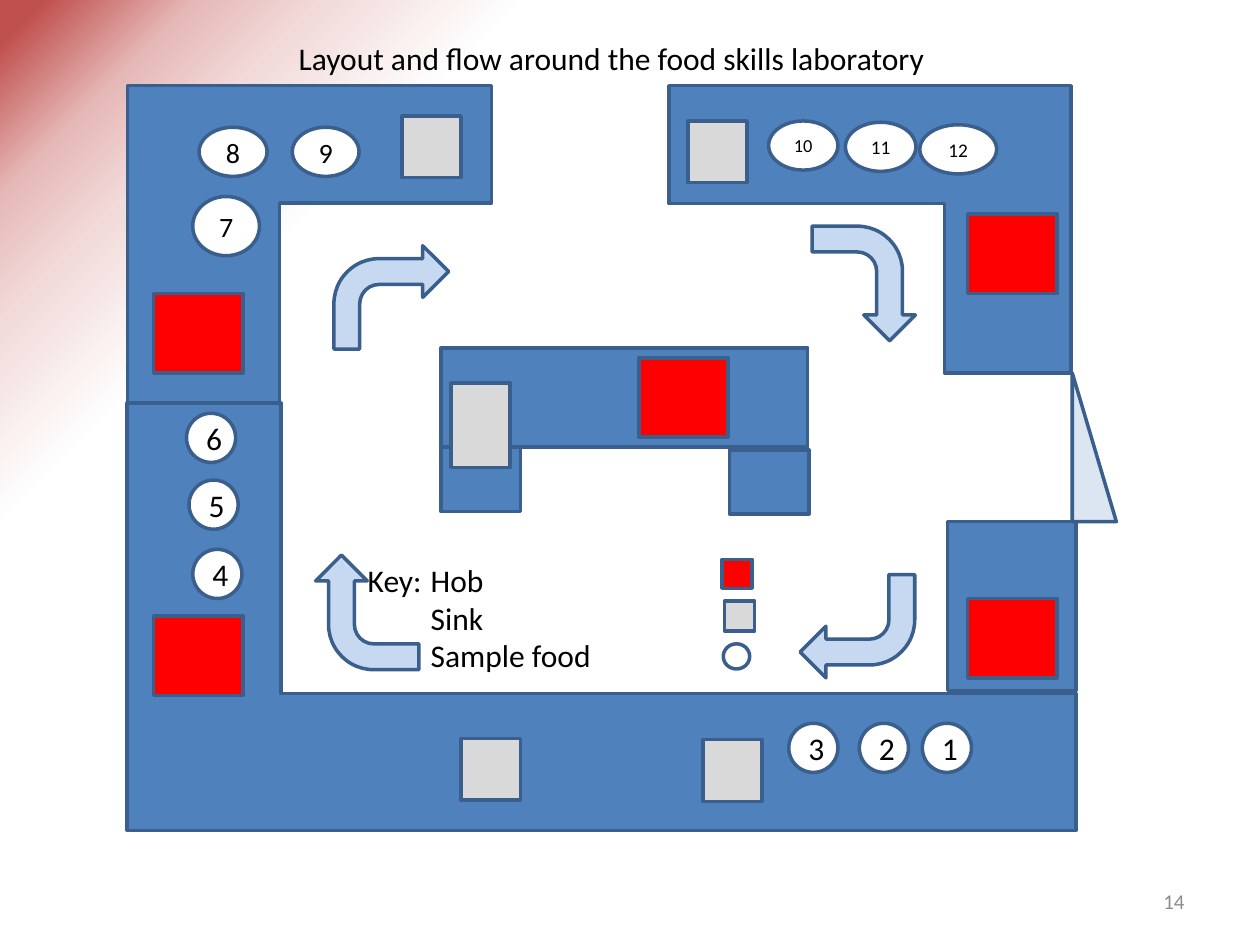
from pptx import Presentation
from pptx.dml.color import RGBColor
from pptx.enum.shapes import MSO_SHAPE
from pptx.enum.text import MSO_ANCHOR, MSO_AUTO_SIZE, PP_ALIGN
from pptx.oxml import parse_xml
from pptx.oxml.ns import nsdecls
from pptx.util import Inches, Pt

RECTANGLE = MSO_SHAPE.RECTANGLE
CORNER = MSO_SHAPE.CORNER
TRIANGLE = MSO_SHAPE.RIGHT_TRIANGLE
CIRCLE = MSO_SHAPE.FLOWCHART_CONNECTOR
BENT_ARROW = MSO_SHAPE.BENT_ARROW
TOP, MIDDLE = MSO_ANCHOR.TOP, MSO_ANCHOR.MIDDLE
LEFT, CENTER, RIGHT = PP_ALIGN.LEFT, PP_ALIGN.CENTER, PP_ALIGN.RIGHT
FIT_SHAPE = MSO_AUTO_SIZE.SHAPE_TO_FIT_TEXT

COLUMNS, ROWS = 100, 75
WHITE, BLACK, GREY_TEXT = "FFFFFF", "000000", "8C8C8C"
BENCH, OUTLINE = "4F81BD", "3A5F8C"
HOB, SINK, FLOW, DOOR = "FF0000", "D9D9D9", "C6D9F1", "DCE6F2"
GLOW = [(76, "FFFFFF"), (85, "F2DCDB"), (91, "E6B9B8"), (98, "C0504D")]


def color(hex_text):
    return RGBColor.from_string(hex_text)


class FloorPlan:
    font_name = "Calibri"
    line_width = Pt(2)

    def __init__(self, presentation):
        self.column = presentation.slide_width / COLUMNS
        self.row = presentation.slide_height / ROWS
        self.slide = presentation.slides.add_slide(presentation.slide_layouts[5])

    def box(self, left, top, width, height):
        return (round(left * self.column), round(top * self.row),
                round(width * self.column), round(height * self.row))

    def background(self, stops):
        stop_xml = "".join(
            f'<a:gs pos="{position * 1000}"><a:srgbClr val="{value}"/></a:gs>'
            for position, value in stops)
        self.slide.element.cSld.insert(0, parse_xml(
            f'<p:bg {nsdecls("p", "a")}><p:bgPr><a:gradFill rotWithShape="1">'
            f'<a:gsLst>{stop_xml}</a:gsLst><a:path path="circle">'
            '<a:fillToRect l="100000" t="100000"/></a:path></a:gradFill>'
            '<a:effectLst/></p:bgPr></p:bg>'))

    def format_text(self, text_frame, size, text_color=BLACK, align=LEFT, anchor=TOP):
        text_frame.vertical_anchor = anchor
        for paragraph in text_frame.paragraphs:
            paragraph.alignment = align
            for run in paragraph.runs:
                run.font.size = Pt(size)
                run.font.name = self.font_name
                run.font.color.rgb = color(text_color)

    def shape(self, kind, place, fill, rotation=0, adjustments=(), flipped=False,
              outlined=True):
        shape = self.slide.shapes.add_shape(kind, *self.box(*place))
        shape.shadow.inherit = False
        shape.rotation = rotation
        for index, value in enumerate(adjustments):
            shape.adjustments[index] = value
        if flipped:
            shape.element.spPr.xfrm.set("flipH", "1")
        shape.fill.solid()
        shape.fill.fore_color.rgb = color(fill)
        if outlined:
            shape.line.color.rgb = color(OUTLINE)
            shape.line.width = self.line_width
        else:
            shape.line.fill.background()
        return shape

    def sample(self, number, place, size):
        shape = self.shape(CIRCLE, place, WHITE)
        shape.text_frame.text = str(number)
        self.format_text(shape.text_frame, size, align=CENTER, anchor=MIDDLE)

    def title(self, text, place, size):
        title = self.slide.shapes.title
        title.left, title.top, title.width, title.height = self.box(*place)
        title.text_frame.text = text
        title.text_frame.word_wrap = False
        title.text_frame.auto_size = FIT_SHAPE
        self.format_text(title.text_frame, size)

    def text(self, text, place, size, **style):
        text_box = self.slide.shapes.add_textbox(*self.box(*place))
        text_box.text_frame.word_wrap = True
        text_box.text_frame.text = text
        self.format_text(text_box.text_frame, size, **style)
        return text_box

    def key(self, lines, place, size, tab_columns):
        text_box = self.text("\n".join(lines), place, size)
        text_box.text_frame.margin_top = Inches(0.38)
        tabs = "".join(f'<a:tab pos="{round(tab * self.column)}" algn="l"/>'
                       for tab in tab_columns)
        for paragraph in text_box.text_frame.paragraphs:
            paragraph._p.get_or_add_pPr().insert(
                0, parse_xml(f'<a:tabLst {nsdecls("a")}>{tabs}</a:tabLst>'))


def main():
    presentation = Presentation()
    presentation.slide_width, presentation.slide_height = Inches(10), Inches(7.5)
    plan = FloorPlan(presentation)
    plan.background(GLOW)
    plan.title("Layout and flow around the food skills laboratory",
               (22.7, 2.6, 52.3, 4), 18)
    plan.shape(RECTANGLE, (2.8, 62.5, 96, 10.1), WHITE, outlined=False)

    plan.shape(CORNER, (10.1, 32, 75.3, 33.9), BENCH, 0, (0.32, 0.36))
    plan.shape(CORNER, (53.1, 6.8, 31.9, 22.8), BENCH, 180, (0.41, 0.44))
    plan.shape(CORNER, (10.1, 6.8, 28.9, 25.2), BENCH, 180, (0.37, 0.48), flipped=True)
    plan.shape(RECTANGLE, (75.2, 41.4, 10.2, 13.4), BENCH)
    plan.shape(TRIANGLE, (85.1, 29.6, 3.5, 11.8), DOOR)
    for place in [(35, 27.6, 29.1, 7.9), (35, 35.5, 6.3, 5.1), (57.9, 35.7, 6.3, 5.1)]:
        plan.shape(RECTANGLE, place, BENCH)

    for left, top in [(12.2, 23.3), (50.7, 28.4), (12.2, 48.9), (76.8, 17), (76.8, 47.5)]:
        plan.shape(RECTANGLE, (left, top, 7.1, 6.3), HOB)
    for left, top, height in [(31.9, 9.2, 4.9), (35.8, 30.4, 6.7), (36.6, 58.6, 4.9),
                              (54.6, 9.6, 4.9), (55.8, 58.7, 4.9)]:
        plan.shape(RECTANGLE, (left, top, 4.7, height), SINK)

    for number, left, top in [(1, 73.2, 57.4), (2, 68.2, 57.4), (3, 62.6, 57.4),
                              (4, 15.3, 43.6), (5, 15, 38.1), (6, 14.8, 32.8)]:
        plan.sample(number, (left, top, 3.9, 3.9), 18)
    for number, place, size in [(7, (15.3, 15.6, 5.3, 4.7), 16),
                                (8, (15.8, 10.1, 5.4, 3.9), 16),
                                (9, (23.2, 10.1, 5.3, 3.9), 16),
                                (10, (61, 9.6, 5.5, 3.9), 10.5),
                                (11, (67.1, 9.7, 5.6, 3.9), 11),
                                (12, (73, 9.9, 6.1, 3.9), 11)]:
        plan.sample(number, place, size)

    plan.key(["\tKey:\tHob", "\t\tSink", "\t\tSample food"],
             (23.2, 40.7, 55.9, 13.5), 18, (5, 10))
    plan.shape(CIRCLE, (57.4, 51.1, 2.1, 2), WHITE)
    plan.shape(RECTANGLE, (57.3, 44.4, 2.4, 2.3), HOB)
    plan.shape(RECTANGLE, (57.5, 47.7, 2.4, 2.4), SINK)

    corners = [(26.5, 19.5), (64, 18.4), (63.5, 45.6), (24.6, 44.5)]
    for turn, (left, top) in enumerate(corners):
        plan.shape(BENT_ARROW, (left, top, 9.1, 8.2), FLOW, 90 * turn)

    plan.text("14", (71.7, 69.5, 23.3, 4), 12,
              text_color=GREY_TEXT, align=RIGHT, anchor=MIDDLE)
    presentation.save("out.pptx")


if __name__ == "__main__":
    main()
